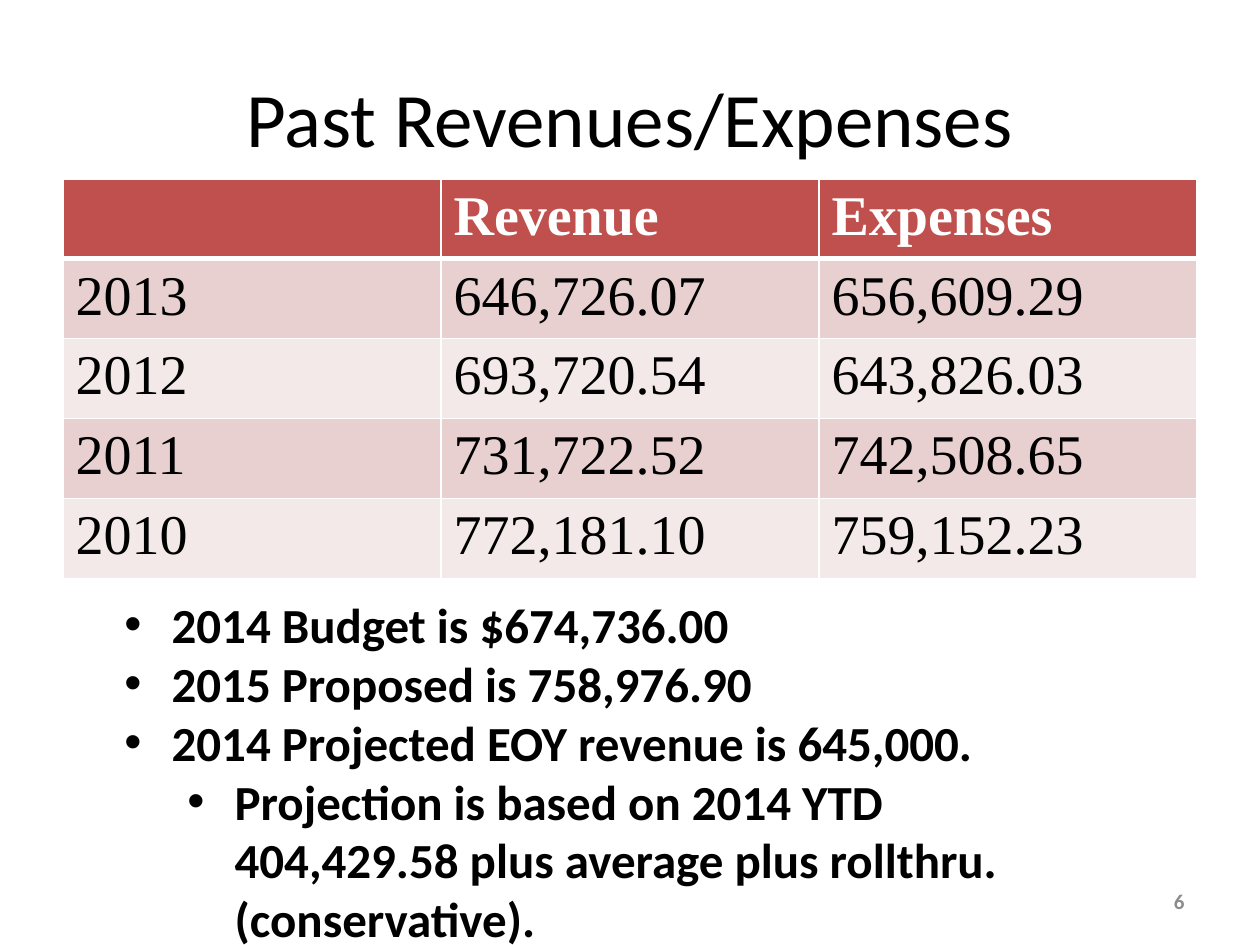
from lxml.etree import SubElement
from pptx import Presentation
from pptx.dml.color import RGBColor
from pptx.enum.text import MSO_ANCHOR, MSO_AUTO_SIZE, PP_ALIGN
from pptx.oxml.ns import qn
from pptx.util import Pt

BLACK = RGBColor(0x00, 0x00, 0x00)
WHITE = RGBColor(0xFF, 0xFF, 0xFF)
GRAY = RGBColor(0x8C, 0x8C, 0x8C)
RED = RGBColor(0xC0, 0x50, 0x4D)
ROSE = RGBColor(0xE8, 0xD0, 0xD0)
PALE = RGBColor(0xF4, 0xE9, 0xE9)

TITLE = {"name": "Calibri", "size": Pt(44)}
LIST = {"name": "Calibri", "size": Pt(28), "bold": True}
PAGE = {"name": "Calibri", "size": Pt(12), "bold": True}
CELL = {"name": "Times New Roman", "size": Pt(32), "bold": False}
HEAD = {**CELL, "bold": True}

ROWS = [
    ("", "Revenue", "Expenses"),
    ("2013", "646,726.07", "656,609.29"),
    ("2012", "693,720.54", "643,826.03"),
    ("2011", "731,722.52", "742,508.65"),
    ("2010", "772,181.10", "759,152.23"),
]
POINTS = [
    (0, "2014 Budget is $674,736.00"),
    (0, "2015 Proposed is 758,976.90"),
    (0, "2014 Projected EOY revenue is 645,000."),
    (1, "Projection is based on 2014 YTD 404,429.58 plus average "
        "plus rollthru. (conservative)."),
]


class Deck:
    def __init__(self, wide, high):
        self.file = Presentation()
        self.file.slide_width, self.file.slide_height = Pt(wide), Pt(high)
        self.slide = self.file.slides.add_slide(self.file.slide_layouts[6])

    def text(self, para, words, style, color):
        run = para.add_run()
        run.text = words
        for key, value in style.items():
            setattr(run.font, key, value)
        run.font.color.rgb = color

    def frame(self, box, anchor):
        frame = self.slide.shapes.add_textbox(*map(Pt, box)).text_frame
        frame.word_wrap = True
        frame.vertical_anchor = anchor
        return frame

    def label(self, box, words, style, color, align):
        para = self.frame(box, MSO_ANCHOR.MIDDLE).paragraphs[0]
        para.alignment = align
        self.text(para, words, style, color)

    def list(self, box, points, style, color):
        frame = self.frame(box, MSO_ANCHOR.TOP)
        frame.auto_size = MSO_AUTO_SIZE.SHAPE_TO_FIT_TEXT
        for i, (level, words) in enumerate(points):
            para = frame.add_paragraph() if i else frame.paragraphs[0]
            para.level = level
            props = para._p.get_or_add_pPr()
            props.set("marL", str(Pt(27 + 36 * level)))
            props.set("indent", str(-Pt(27)))
            SubElement(props, qn("a:buFont"), typeface="Arial")
            SubElement(props, qn("a:buChar"), char="•")
            self.text(para, words, style, color)

    def edge(self, cell, top, bottom):
        """Draw white cell borders; the side borders are 1 pt wide."""
        props = cell._tc.get_or_add_tcPr()
        for side, width in zip("LRTB", (1, 1, top, bottom)):
            line = SubElement(props, qn(f"a:ln{side}"), w=str(Pt(width)))
            fill = SubElement(line, qn("a:solidFill"))
            SubElement(fill, qn("a:srgbClr"), val=str(WHITE))

    def table(self, box, rows):
        shape = self.slide.shapes.add_table(len(rows), len(rows[0]), *map(Pt, box))
        for r, row in enumerate(rows):
            for c, words in enumerate(row):
                cell = shape.table.cell(r, c)
                self.edge(cell, 3 if r == 1 else 1, 3 if r == 0 else 1)
                cell.fill.solid()
                cell.fill.fore_color.rgb = (ROSE if r % 2 else PALE) if r else RED
                if words:
                    style, color = (CELL, BLACK) if r else (HEAD, WHITE)
                    self.text(cell.text_frame.paragraphs[0], words, style, color)


def main():
    deck = Deck(720, 540)
    deck.label((36, 21.6, 648, 90), "Past Revenues/Expenses", TITLE, BLACK,
               PP_ALIGN.CENTER)
    deck.table((36, 102.24, 648, 213), ROWS)
    deck.label((516, 500.5, 168, 28.8), "6", PAGE, GRAY, PP_ALIGN.RIGHT)
    deck.list((64, 336.24, 528, 250), POINTS, LIST, BLACK)
    deck.file.save("out.pptx")


if __name__ == "__main__":
    main()
